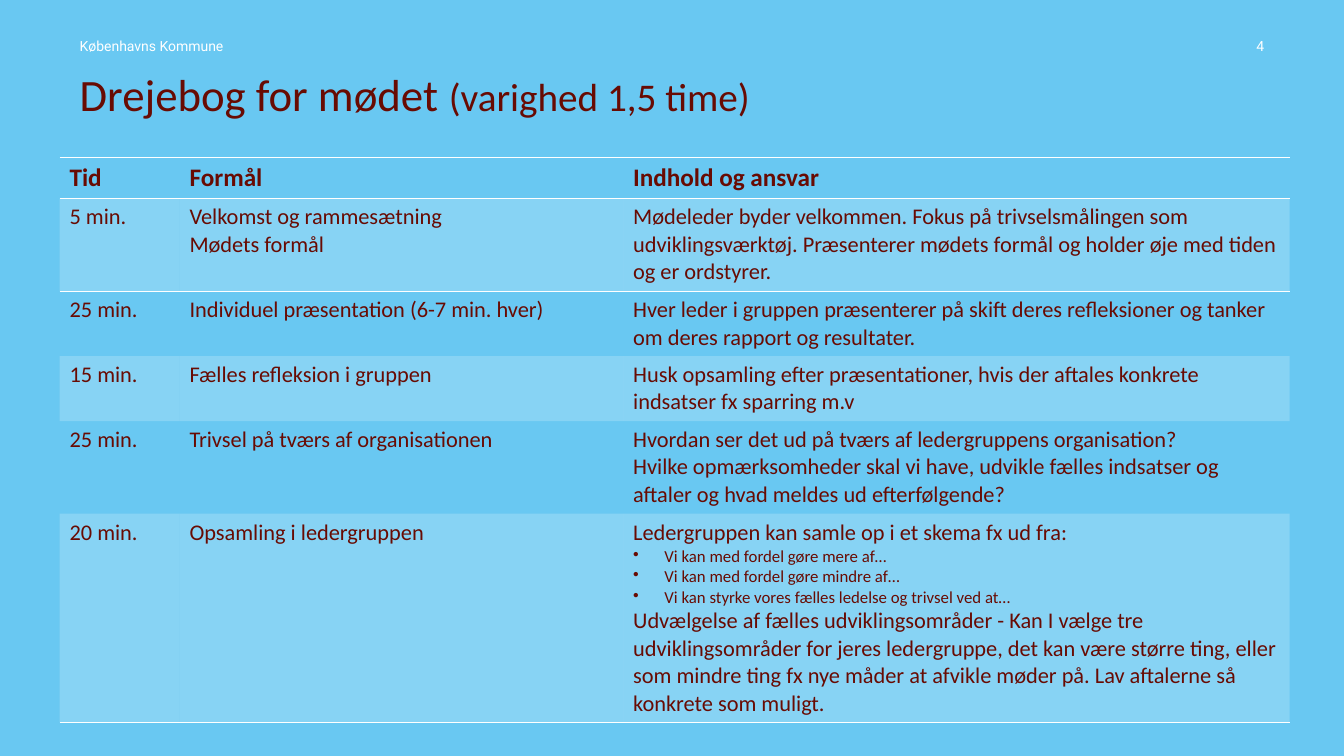
import pptx
import pptx.dml.color
import pptx.enum.text
import pptx.oxml
import pptx.oxml.ns
import pptx.util
from pptx.util import Inches

RGBColor = pptx.dml.color.RGBColor
SKY = RGBColor(0x69, 0xC8, 0xF2)
MAROON = RGBColor(0x68, 0x0B, 0x03)
WHITE = RGBColor(0xFF, 0xFF, 0xFF)
ALIGN = pptx.enum.text.PP_ALIGN
ANCHOR = pptx.enum.text.MSO_ANCHOR
NO_GRID = "{2D5ABB26-0587-4C30-8999-92F81FD0307C}"

COLUMN_WIDTHS = [1.19, 4.4, 6.61]
ROW_HEIGHTS = [0.41, 0.92, 0.64, 0.64, 0.92, 2.06]
AGENDA = [
    ("Tid", "Formål", "Indhold og ansvar"),
    ("5 min.", "Velkomst og rammesætning\nMødets formål",
     "Mødeleder byder velkommen. Fokus på trivselsmålingen som udviklingsværktøj. "
     "Præsenterer mødets formål og holder øje med tiden og er ordstyrer."),
    ("25 min.", "Individuel præsentation (6-7 min. hver)",
     "Hver leder i gruppen præsenterer på skift deres refleksioner og tanker "
     "om deres rapport og resultater."),
    ("15 min.", "Fælles refleksion i gruppen",
     "Husk opsamling efter præsentationer, hvis der aftales konkrete "
     "indsatser fx sparring m.v"),
    ("25 min.", "Trivsel på tværs af organisationen",
     "Hvordan ser det ud på tværs af ledergruppens organisation?\n"
     "Hvilke opmærksomheder skal vi have, udvikle fælles indsatser og aftaler "
     "og hvad meldes ud efterfølgende?"),
    ("20 min.", "Opsamling i ledergruppen",
     "Ledergruppen kan samle op i et skema fx ud fra:\n"
     "• Vi kan med fordel gøre mere af…\n"
     "• Vi kan med fordel gøre mindre af…\n"
     "• Vi kan styrke vores fælles ledelse og trivsel ved at…\n"
     "Udvælgelse af fælles udviklingsområder - Kan I vælge tre udviklingsområder "
     "for jeres ledergruppe, det kan være større ting, eller som mindre ting fx nye "
     "måder at afvikle møder på. Lav aftalerne så konkrete som muligt."),
]


def add_text(p, text, size=16, font="Calibri", color=MAROON, bold=False, align=ALIGN.LEFT):
    """Append a formatted run to a paragraph."""
    p.alignment = align
    r = p.add_run()
    r.text = text
    r.font.size = pptx.util.Pt(size)
    r.font.name = font
    r.font.color.rgb = color
    r.font.bold = bold


def clear_insets(tf, anchor):
    """Remove the insets of a text frame and fix its wrapping and anchor."""
    tf.word_wrap = True
    tf.auto_size = pptx.enum.text.MSO_AUTO_SIZE.NONE
    tf.vertical_anchor = anchor
    tf.margin_left = tf.margin_right = tf.margin_top = tf.margin_bottom = 0


def add_label(s, text, left, top, width, height, align=ALIGN.LEFT):
    """Place a small white header label."""
    sp = s.shapes.add_textbox(Inches(left), Inches(top), Inches(width), Inches(height))
    clear_insets(sp.text_frame, ANCHOR.BOTTOM)
    add_text(sp.text_frame.paragraphs[0], text, size=10, font="Roboto", color=WHITE, align=align)


def add_header(s, left, top, width):
    """Place the sender, page number and title across the given width."""
    add_label(s, "Københavns Kommune", left, top, 3.85, 0.2)
    add_label(s, "4", left + width - 0.43, top, 0.43, 0.2, align=ALIGN.RIGHT)
    sp = s.shapes.title
    sp.left, sp.top = Inches(left), Inches(top + 0.38)
    sp.width, sp.height = Inches(width), Inches(0.7)
    clear_insets(sp.text_frame, ANCHOR.TOP)
    p = sp.text_frame.paragraphs[0]
    p.line_spacing = 0.9
    add_text(p, "Drejebog for mødet ", size=32)
    add_text(p, "(varighed 1,5 time)", size=28)


def add_bullet(p):
    """Give a paragraph a hanging bullet."""
    pPr = p._p.get_or_add_pPr()
    pPr.set("marL", str(Inches(0.31)))
    pPr.set("indent", str(-Inches(0.31)))
    bullet = pptx.oxml.parse_xml(f'<a:buChar {pptx.oxml.ns.nsdecls("a")} char="•"/>')
    pPr.append(bullet)


def add_border(cell, side):
    """Draw a thin white line on the T or B side of a cell."""
    cell._tc.get_or_add_tcPr().append(pptx.oxml.parse_xml(
        f'<a:ln{side} {pptx.oxml.ns.nsdecls("a")} w="12700"><a:solidFill>'
        f'<a:srgbClr val="{WHITE}"/></a:solidFill></a:ln{side}>'))


def fill_cell(cell, shaded):
    """Shade a cell with translucent white or leave it clear."""
    if not shaded:
        cell.fill.background()
        return
    cell.fill.solid()
    cell.fill.fore_color.rgb = WHITE
    clr = cell._tc.tcPr.find(".//" + pptx.oxml.ns.qn("a:solidFill") + "[last()]/"
                             + pptx.oxml.ns.qn("a:srgbClr"))
    for clr in cell._tc.tcPr.findall(pptx.oxml.ns.qn("a:solidFill") + "/"
                                     + pptx.oxml.ns.qn("a:srgbClr")):
        clr.append(pptx.oxml.parse_xml(
            f'<a:alpha {pptx.oxml.ns.nsdecls("a")} val="20000"/>'))


def write_cell(cell, text, header):
    """Write the lines of a cell, turning marked lines into bullets."""
    tf = cell.text_frame
    for i, line in enumerate(text.split("\n")):
        p = tf.add_paragraph() if i else tf.paragraphs[0]
        if line.startswith("• "):
            add_bullet(p)
            add_text(p, line[2:], size=12)
        else:
            add_text(p, line, size=18 if header else 16, bold=header)


def add_agenda(s, left, top, width):
    """Place the agenda table with shaded odd rows."""
    frame = s.shapes.add_table(len(AGENDA), len(COLUMN_WIDTHS), Inches(left), Inches(top),
                               Inches(width), Inches(sum(ROW_HEIGHTS)))
    table = frame.table
    table.horz_banding = False
    table._tbl.tblPr.find(pptx.oxml.ns.qn("a:tableStyleId")).text = NO_GRID
    for column, column_width in zip(table.columns, COLUMN_WIDTHS):
        column.width = Inches(column_width)
    for i, (row, texts) in enumerate(zip(table.rows, AGENDA)):
        row.height = Inches(ROW_HEIGHTS[i])
        for cell, text in zip(row.cells, texts):
            if i <= 1:
                add_border(cell, "T")
            if i in (0, len(AGENDA) - 1):
                add_border(cell, "B")
            fill_cell(cell, shaded=i % 2 == 1)
            write_cell(cell, text, header=i == 0)


def main():
    """Build and save the slide."""
    prs = pptx.Presentation()
    prs.slide_width, prs.slide_height = Inches(13.33), Inches(7.5)
    s = prs.slides.add_slide(prs.slide_layouts[5])
    s.background.fill.solid()
    s.background.fill.fore_color.rgb = SKY
    add_header(s, 0.79, 0.34, 11.75)
    add_agenda(s, 0.59, 1.56, 12.2)
    prs.save("out.pptx")


if __name__ == "__main__":
    main()
